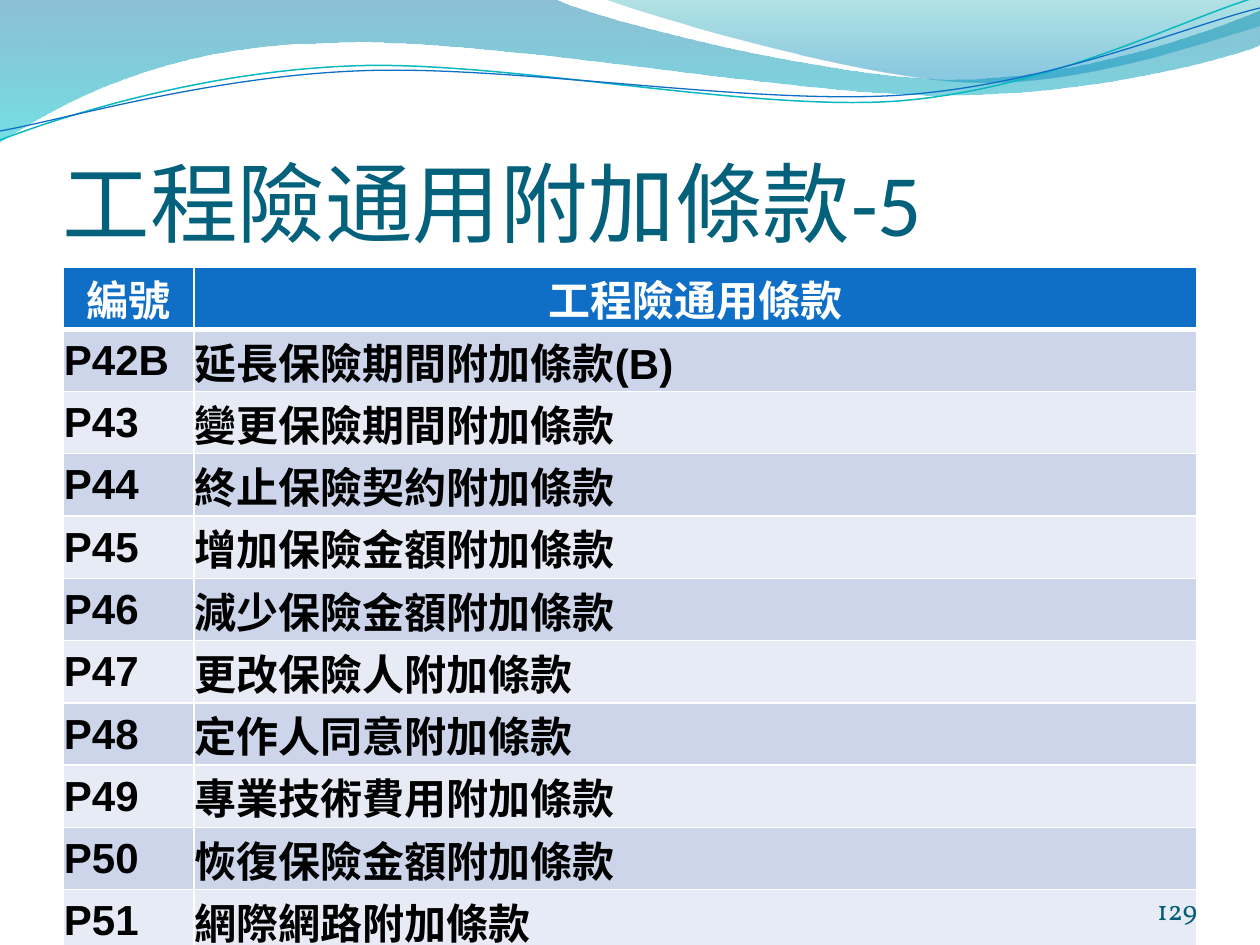
from dataclasses import dataclass
from typing import Optional

from lxml import etree
from pptx import Presentation
from pptx import util as u
from pptx.dml.color import RGBColor
from pptx.enum import text
from pptx.oxml import ns

EMU_PER_PX = 914400 / 126

HEADER_BLUE, BAND_DARK, BAND_LIGHT = "0F6FC6", "CCD5EA", "E7EBF5"
WHITE, BLACK = "FFFFFF", "000000"

HEADINGS = ("編號", "工程險通用條款")
CLAUSES = [
    ("P42B", "延長保險期間附加條款(B)"),
    ("P43", "變更保險期間附加條款"),
    ("P44", "終止保險契約附加條款"),
    ("P45", "增加保險金額附加條款"),
    ("P46", "減少保險金額附加條款"),
    ("P47", "更改保險人附加條款"),
    ("P48", "定作人同意附加條款"),
    ("P49", "專業技術費用附加條款"),
    ("P50", "恢復保險金額附加條款"),
    ("P51", "網際網路附加條款"),
]


@dataclass(frozen=True)
class Stop:
    position: float
    color: str
    alpha: int


@dataclass(frozen=True)
class Wave:
    """Segments hold one point for a straight line or three for a cubic curve."""
    start: tuple
    segments: tuple
    stops: tuple = ()
    line: Optional[str] = None
    weight: float = 0


WAVES = [
    Wave((0, 0), (
        ((554, -1),),
        ((600, 21), (837, 79), (955, 79)),
        ((1075, 79), (1207, 33), (1260, 11)),
        ((1261, 45),),
        ((1239, 55), (1096, 96), (940, 95)),
        ((784, 95), (481, 35), (324, 43)),
        ((163, 45), (58, 105), (-1, 142)),
        ((0, 0),),
    ), stops=(Stop(0, "0074A1", 45), Stop(1, "00C6CF", 55))),
    Wave((604, -1), (
        ((641, 14), (859, 78), (969, 82)),
        ((1079, 87), (1211, 40), (1260, 26)),
        ((1260, 0),),
        ((604, -1),),
    ), stops=(Stop(0, "00A1A9", 30), Stop(0.8, "008BBF", 45))),
    Wave((0, 140), (
        ((60, 117), (199, 72), (349, 66)),
        ((498, 59), (747, 112), (898, 101)),
        ((1050, 89), (1182, 19), (1257, -3)),
    ), line="0AB8BF", weight=0.85),
    Wave((0, 131), (
        ((59, 121), (207, 77), (357, 71)),
        ((508, 64), (752, 106), (903, 95)),
        ((1053, 84), (1186, 26), (1260, 8)),
    ), line="0F6FC6", weight=0.75),
]


def px(length: int) -> u.Emu:
    return u.Emu(round(length * EMU_PER_PX))


def rgb(color: str) -> RGBColor:
    return RGBColor.from_string(color)


def bend_segments(shape, segments: tuple) -> None:
    """Merge the three straight steps of each cubic segment into one curve."""
    steps = iter(list(shape._element.iter(ns.qn("a:lnTo"))))
    for segment in segments:
        first, *others = [next(steps) for _ in segment]
        if others:
            first.tag = ns.qn("a:cubicBezTo")
            for step in others:
                first.append(step[0])
                step.getparent().remove(step)


def draw_wave(slide, wave: Wave) -> None:
    builder = slide.shapes.build_freeform(*wave.start, scale=EMU_PER_PX)
    points = [point for segment in wave.segments for point in segment]
    builder.add_line_segments(points, close=bool(wave.stops))
    shape = builder.convert_to_shape()
    bend_segments(shape, wave.segments)
    shape.shadow.inherit = False
    if wave.line:
        shape.fill.background()
        shape.line.color.rgb = rgb(wave.line)
        shape.line.width = u.Pt(wave.weight)
        return
    shape.line.fill.background()
    shape.fill.gradient()
    shape.fill.gradient_angle = 270
    for target, stop in zip(shape.fill.gradient_stops, wave.stops):
        target.position = stop.position
        target.color.rgb = rgb(stop.color)
    for color, stop in zip(shape._element.iter(ns.qn("a:srgbClr")), wave.stops):
        etree.SubElement(color, ns.qn("a:alpha"), val=str(stop.alpha * 1000))


def write(holder, content: str, *, size: int, font: str, color: str, bold: bool = False,
          align=text.PP_ALIGN.LEFT, anchor=text.MSO_ANCHOR.BOTTOM,
          insets: tuple = (0, 0, 0, 0)) -> None:
    """Fill a text frame or table cell; insets run left, top, right, bottom."""
    (holder.margin_left, holder.margin_top,
     holder.margin_right, holder.margin_bottom) = map(px, insets)
    holder.vertical_anchor = anchor
    frame = getattr(holder, "text_frame", holder)
    frame.word_wrap = True
    paragraph = frame.paragraphs[0]
    paragraph.alignment = align
    run = paragraph.add_run()
    run.text = content
    run.font.size, run.font.name, run.font.bold = u.Pt(size), font, bold
    run.font.color.rgb = rgb(color)


def add_label(slide, box: tuple, content: str, **style) -> None:
    write(slide.shapes.add_textbox(*map(px, box)).text_frame, content, **style)


def set_borders(cell, color: str, top: int, bottom: int) -> None:
    properties = cell._tc.get_or_add_tcPr()
    for side, points in (("L", 1), ("R", 1), ("T", top), ("B", bottom)):
        border = etree.SubElement(properties, ns.qn(f"a:ln{side}"), w=str(u.Pt(points)))
        fill = etree.SubElement(border, ns.qn("a:solidFill"))
        etree.SubElement(fill, ns.qn("a:srgbClr"), val=color)


def add_clause_table(slide) -> None:
    rows = [HEADINGS, *CLAUSES]
    widths, height = (131, 1003), 685
    table = slide.shapes.add_table(
        len(rows), len(widths), px(63), px(267), px(sum(widths)), px(height)).table
    for column, width in zip(table.columns, widths):
        column.width = px(width)
    for r, row in enumerate(rows):
        header = r == 0
        background = HEADER_BLUE if header else (BAND_LIGHT, BAND_DARK)[r % 2]
        for c, content in enumerate(row):
            cell = table.cell(r, c)
            set_borders(cell, WHITE, top=3 if r == 1 else 1, bottom=3 if header else 1)
            cell.fill.solid()
            cell.fill.fore_color.rgb = rgb(background)
            write(cell, content, size=24, font="Arial", bold=True,
                  color=WHITE if header else BLACK,
                  align=text.PP_ALIGN.CENTER if header else text.PP_ALIGN.LEFT,
                  anchor=text.MSO_ANCHOR.MIDDLE, insets=(1, 1, 1, 0))


def main() -> None:
    deck = Presentation()
    deck.slide_width, deck.slide_height = px(1260), px(945)
    slide = deck.slides.add_slide(deck.slide_layouts[6])
    for wave in WAVES:
        draw_wave(slide, wave)
    add_label(slide, (63, 97, 1134, 157), "工程險通用附加條款-5",
              size=50, font="Calibri", color="04617B", insets=(0, 6, 0, 0))
    add_clause_table(slide)
    add_label(slide, (1092, 876, 105, 50), "129", size=16, font="Vollkorn",
              color="045D75", align=text.PP_ALIGN.RIGHT)
    deck.save("out.pptx")


if __name__ == "__main__":
    main()
